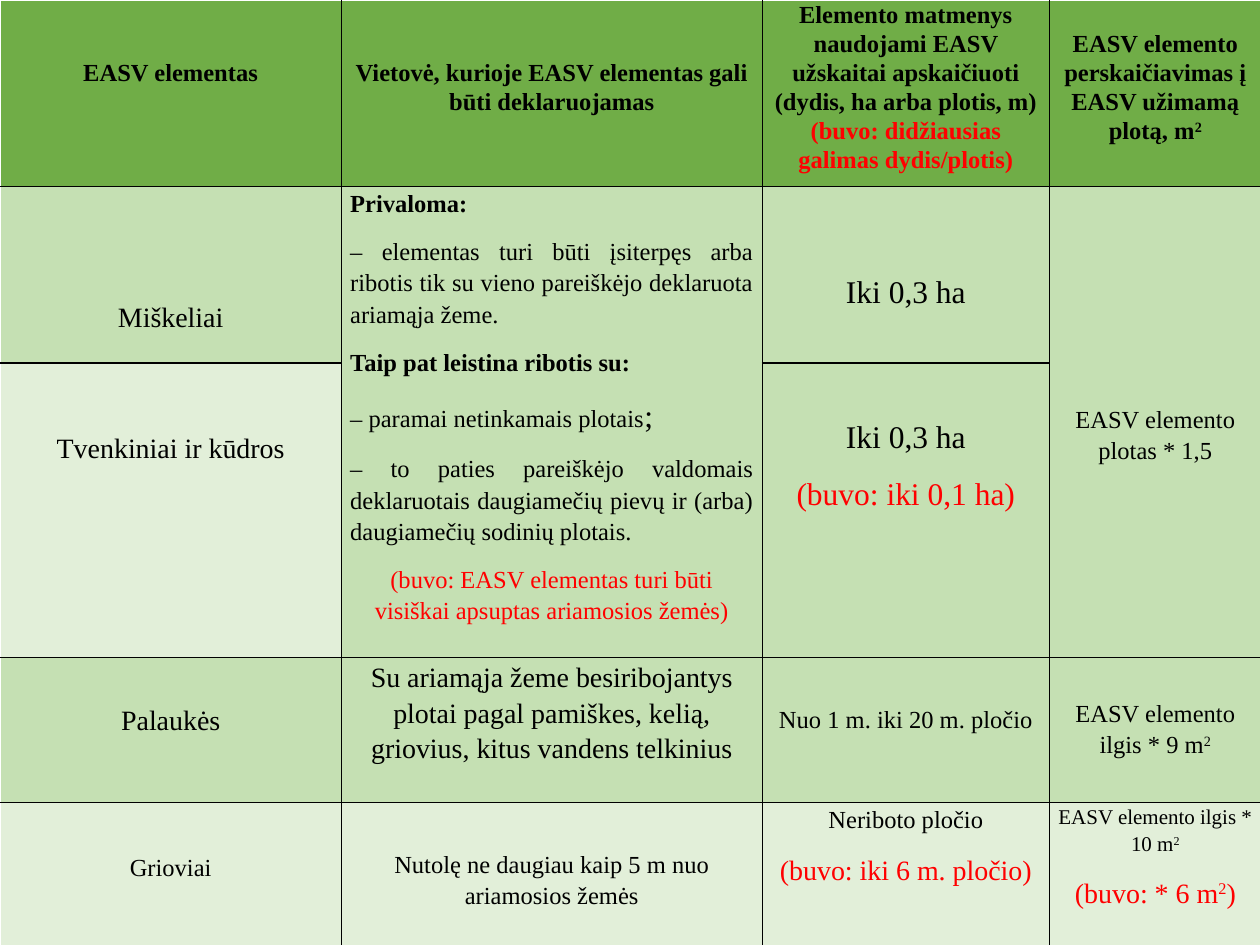
"""Build the slide with the table of EASV elements and their conversion rules."""
from dataclasses import dataclass

import lxml.etree
import pptx
import pptx.dml.color
import pptx.enum.text
import pptx.oxml.ns
import pptx.util

ALIGN = pptx.enum.text.PP_ALIGN


@dataclass(frozen=True)
class Theme:
    font: str = "Times New Roman"
    header: str = "70AD47"
    mid: str = "C5E0B3"
    light: str = "E2EFD9"
    ink: str = "000000"
    alert: str = "FF0000"
    edge: str = "FFFFFF"
    small: int = 12
    body: int = 14
    name: int = 16
    large: int = 18
    border: float = 1
    inset: float = 0.7


T = Theme()
COLS = [27.1, 33.4, 22.8, 16.8]
ROWS = [19.73, 18.67, 31.2, 15.33, 15.47]


@dataclass
class Para:
    runs: list
    size: float = T.body
    color: str = T.ink
    bold: bool = False
    align: ALIGN = ALIGN.CENTER
    spacing: float = 1.15
    after: float = 10


@dataclass
class Cell:
    row: int
    col: int
    fill: str
    pad: float
    paras: list
    span: int = 1


def tight(text, size=T.body, **style):
    return Para([text], size, spacing=1.07, after=0, **style)


def head(*runs, color=T.ink):
    return Para(list(runs), color=color, bold=True, spacing=1.07, after=0)


def squared(text, *tail, **style):
    return Para([text + "m", ("2", {"baseline": 30000}), *tail], **style)


class Deck:
    def __init__(self, theme):
        self.theme = theme
        self.prs = pptx.Presentation()
        self.prs.slide_width = pptx.util.Inches(10)
        self.prs.slide_height = pptx.util.Inches(7.5)
        self.s = self.prs.slides.add_slide(self.prs.slide_layouts[6])

    def x(self, share):
        return int(self.prs.slide_width * share / 100)

    def y(self, share):
        return int(self.prs.slide_height * share / 100)

    def table(self, cols, rows, cells):
        frame = self.s.shapes.add_table(
            len(rows), len(cols), 0, 0, self.x(sum(cols)), self.y(sum(rows)))
        tbl = frame.table
        tbl.first_row = tbl.horz_banding = False
        for col, share in zip(tbl.columns, cols):
            col.width = self.x(share)
        for row, share in zip(tbl.rows, rows):
            row.height = self.y(share)
        for item in cells:
            cell = tbl.cell(item.row, item.col)
            if item.span > 1:
                cell.merge(tbl.cell(item.row + item.span - 1, item.col))
            self.borders(cell, {
                "L": item.col == 0,
                "R": item.col == len(cols) - 1,
                "T": item.row == 0,
                "B": item.row + item.span == len(rows)})
            self.cell(cell, item)

    def borders(self, cell, outer):
        qn = pptx.oxml.ns.qn
        for side, is_outer in outer.items():
            ln = lxml.etree.SubElement(
                cell._tc.get_or_add_tcPr(), qn(f"a:ln{side}"),
                w=str(pptx.util.Pt(self.theme.border)))
            fill = lxml.etree.SubElement(ln, qn("a:solidFill"))
            color = self.theme.edge if is_outer else self.theme.ink
            lxml.etree.SubElement(fill, qn("a:srgbClr"), val=color)

    def cell(self, cell, item):
        cell.fill.solid()
        cell.fill.fore_color.rgb = pptx.dml.color.RGBColor.from_string(item.fill)
        cell.margin_left = cell.margin_right = self.x(self.theme.inset)
        cell.margin_top, cell.margin_bottom = self.y(item.pad), 0
        tf = cell.text_frame
        for i, para in enumerate(item.paras):
            p = tf.add_paragraph() if i else tf.paragraphs[0]
            self.paragraph(p, para)

    def paragraph(self, p, para):
        p.alignment = para.align
        p.line_spacing = para.spacing
        p.space_after = pptx.util.Pt(para.after)
        p.font.name = self.theme.font
        p.font.size = pptx.util.Pt(para.size)
        p.font.bold = para.bold
        p.font.color.rgb = pptx.dml.color.RGBColor.from_string(para.color)
        for run in para.runs:
            text, style = run if isinstance(run, tuple) else (run, {})
            r = p.add_run()
            r.text = text
            if "size" in style:
                r.font.size = pptx.util.Pt(style["size"])
            if "baseline" in style:
                r._r.get_or_add_rPr().set("baseline", str(style["baseline"]))


CELLS = [
    Cell(0, 0, T.header, 6.13, [head("EASV elementas")]),
    Cell(0, 1, T.header, 6.13, [
        head("Vietovė, kurioje EASV elementas gali būti deklaruojamas")]),
    Cell(0, 2, T.header, 0, [
        head("Elemento matmenys naudojami EASV užskaitai apskaičiuoti "
             "(dydis, ha arba plotis, m)"),
        head("(buvo: didžiausias galimas dydis/plotis)", color=T.alert)]),
    Cell(0, 3, T.header, 3.07, [
        head("EASV elemento perskaičiavimas į EASV užimamą plotą, m",
             ("2", {"baseline": 30000}))]),
    Cell(1, 0, T.mid, 12.07, [tight("Miškeliai", T.name)]),
    Cell(1, 1, T.mid, 0, [
        Para(["Privaloma:"], bold=True, align=ALIGN.LEFT),
        Para(["– elementas turi būti įsiterpęs arba ribotis tik su vieno "
              "pareiškėjo deklaruota ariamąja žeme."], align=ALIGN.JUSTIFY),
        Para(["Taip pat leistina ribotis su:"], bold=True, align=ALIGN.JUSTIFY),
        Para(["– paramai netinkamais plotais", (";", {"size": T.large})],
             align=ALIGN.JUSTIFY),
        Para(["– to paties pareiškėjo valdomais deklaruotais daugiamečių "
              "pievų ir (arba) daugiamečių sodinių plotais."],
             align=ALIGN.JUSTIFY),
        Para(["(buvo: EASV elementas turi būti visiškai apsuptas ariamosios "
              "žemės)"], color=T.alert)], span=2),
    Cell(1, 2, T.mid, 8.9, [Para(["Iki 0,3 ha"], T.large)]),
    Cell(1, 3, T.mid, 22.9, [Para(["EASV elemento plotas * 1,5"])], span=2),
    Cell(2, 0, T.light, 7.24, [tight("Tvenkiniai ir kūdros", T.name)]),
    Cell(2, 2, T.mid, 5.5, [
        Para(["Iki 0,3 ha"], T.large),
        Para(["(buvo: iki 0,1 ha)"], T.large, T.alert)]),
    Cell(3, 0, T.mid, 4.8, [tight("Palaukės", T.name)]),
    Cell(3, 1, T.mid, 0, [
        Para(["Su ariamąja žeme besiribojantys plotai pagal pamiškes, kelią, "
              "griovius, kitus vandens telkinius"], T.name)]),
    Cell(3, 2, T.mid, 4.8, [Para(["Nuo 1 m. iki 20 m. pločio"])]),
    Cell(3, 3, T.mid, 4.13, [squared("EASV elemento ilgis * 9 ")]),
    Cell(4, 0, T.light, 5.37, [tight("Grioviai")]),
    Cell(4, 1, T.light, 4.8, [
        Para(["Nutolę ne daugiau kaip 5 m nuo ariamosios žemės"])]),
    Cell(4, 2, T.light, 0, [
        Para(["Neriboto pločio"]),
        Para(["(buvo: iki 6 m. pločio)"], T.name, T.alert)]),
    Cell(4, 3, T.light, 0, [
        squared("EASV elemento ilgis * 10 ", size=T.small),
        squared("(buvo: * 6 ", ")", size=T.name, color=T.alert)]),
]


def main():
    deck = Deck(T)
    deck.table(COLS, ROWS, CELLS)
    deck.prs.save("out.pptx")


if __name__ == "__main__":
    main()
